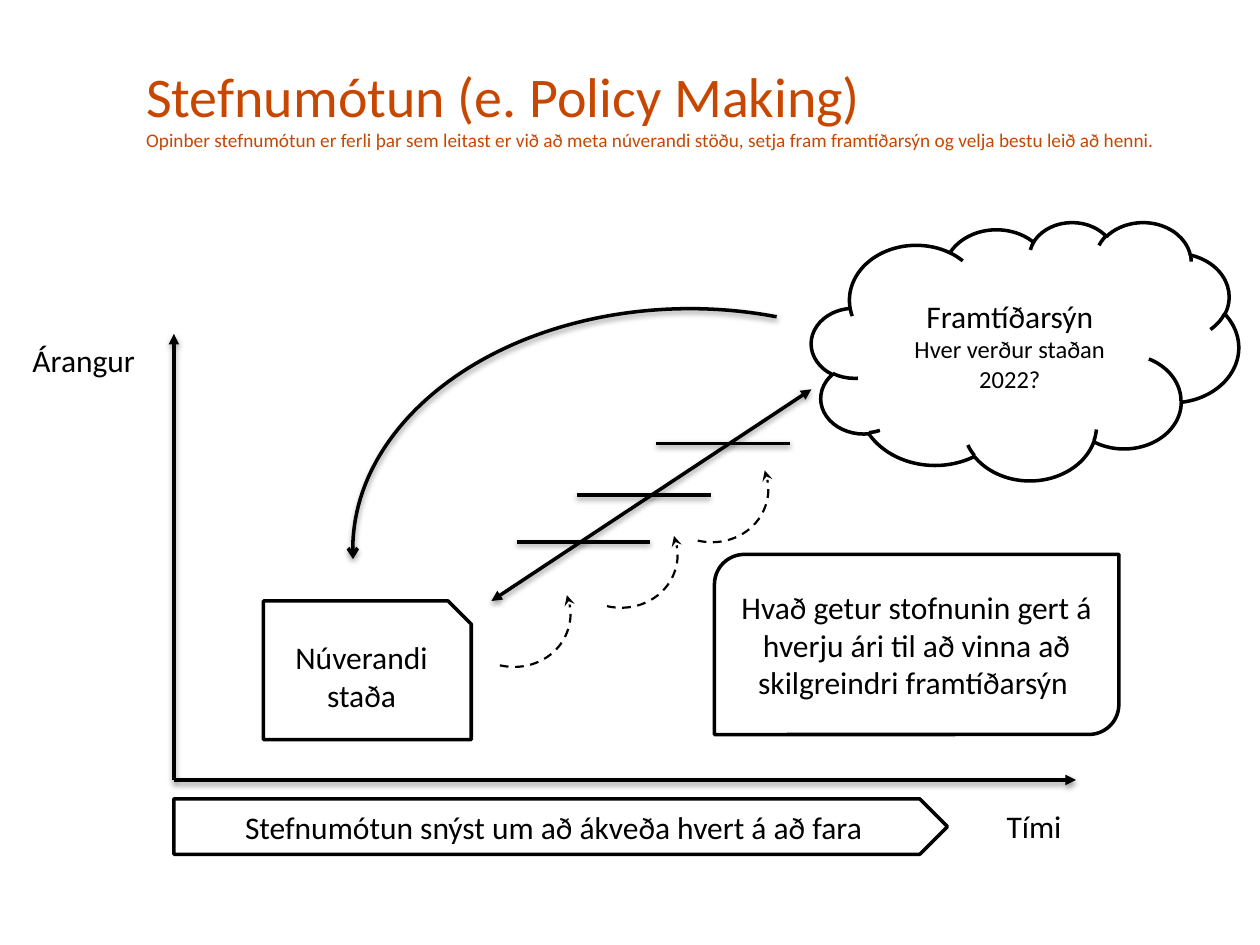
from lxml.etree import SubElement as Sub
from pptx import Presentation
from pptx.dml.color import RGBColor as Rgb
from pptx.enum.dml import MSO_LINE as Dash
from pptx.enum.shapes import MSO_CONNECTOR as Link, MSO_SHAPE as Form
from pptx.enum.text import MSO_ANCHOR as Anchor, PP_ALIGN as Align
from pptx.oxml.ns import qn
from pptx.util import Inches, Pt

HUES = {"ink": "000000", "paper": "FFFFFF", "title": "C84700"}
INK, PAPER, RUST = [Rgb.from_string(HUES[k]) for k in ("ink", "paper", "title")]


def write(frame, parts, hue, align):
    """Fill a text frame with one paragraph; each (text, size) is a line."""
    frame.word_wrap = True
    para = frame.paragraphs[0]
    para.alignment = align
    for i, (text, size) in enumerate(parts):
        if i:
            para.add_line_break()
        run = para.add_run()
        run.text = text
        look = {"name": "Calibri", "size": Pt(size)}
        for key, val in look.items():
            setattr(run.font, key, val)
        run.font.color.rgb = hue


def stroke(shape, width=2, head=None, tail=None, dash=None, shade=False):
    """Draw the outline, its arrowheads and an optional soft shadow."""
    line = shape.line
    line.color.rgb = INK
    line.width = Pt(width)
    if dash:
        line.dash_style = dash
    props = shape._element.spPr
    for tag, kind in (("a:headEnd", head), ("a:tailEnd", tail)):
        if kind:
            Sub(props.find(qn("a:ln")), qn(tag), type=kind)
    fx = Sub(props, qn("a:effectLst"))
    if shade:
        soft = Sub(fx, qn("a:outerShdw"), blurRad="40000", dist="20000",
                   dir="5400000", rotWithShape="0")
        tint = Sub(soft, qn("a:srgbClr"), val=HUES["ink"])
        Sub(tint, qn("a:alpha"), val="38000")


deck = Presentation()
deck.slide_width, deck.slide_height = Inches(10), Inches(7.5)
slide = deck.slides.add_slide(deck.slide_layouts[5])
shapes = slide.shapes

# Title with a small subtitle line
title = shapes.title
spot = {"left": 1.06, "top": 0.13, "width": 8.74, "height": 1.43}
for key, val in spot.items():
    setattr(title, key, Inches(val))
title.text_frame.vertical_anchor = Anchor.MIDDLE
write(title.text_frame, [
    ("Stefnumótun (e. Policy Making)", 32),
    ("Opinber stefnumótun er ferli þar sem leitast er við að meta núverandi "
     "stöðu, setja fram framtíðarsýn og velja bestu leið að henni.", 11),
], RUST, Align.LEFT)

# Axes, the path between the two states, and its steps
lines = [
    ((1.38, 6.19, 1.38, 2.65), {"tail": "triangle"}),
    ((1.38, 6.19, 8.54, 6.19), {"tail": "triangle"}),
    ((3.9, 4.77, 6.44, 3.09), {"head": "triangle", "tail": "triangle"}),
]
for x, y in ((4.1, 4.3), (4.58, 3.93), (5.21, 3.52)):
    lines.append(((x, y, x + 1.06, y), {}))
for ends, look in lines:
    link = shapes.add_connector(Link.STRAIGHT, *map(Inches, ends))
    stroke(link, shade=True, **look)

# Arcs: one long way back, three dashed hops
back = {"tail": "arrow", "shade": True}
hop = {"width": 1.25, "tail": "stealth", "dash": Dash.DASH}
arcs = [((2.8, 2.45, 5.35, 3.83), "flipH", 0, (149.744, 0.93), back)]
for x, y in ((3.59, 4.42), (4.44, 3.95), (5.16, 3.43)):
    arcs.append(((x, y, 0.94, 0.87), "flipV", 16.5, (164.565, 19.9), hop))
for box, flip, turn, sweep, look in arcs:
    arc = shapes.add_shape(Form.ARC, *map(Inches, box))
    arc.adjustments[0], arc.adjustments[1] = sweep
    arc.rotation = turn
    arc._element.spPr.xfrm.set(flip, "1")
    arc.fill.background()
    stroke(arc, **look)

# Outlined shapes with centred text
cards = [
    (Form.CLOUD, (6.44, 1.76, 3.39, 2.05),
     [("Framtíðarsýn", 18), ("Hver verður staðan 2022?", 14)]),
    (Form.SNIP_1_RECTANGLE, (2.09, 4.77, 1.65, 1.1),
     [("Núverandi staða", 18)]),
    (Form.ROUND_2_DIAG_RECTANGLE, (5.67, 4.4, 3.21, 1.43),
     [("Hvað getur stofnunin gert á hverju ári til að vinna að "
       "skilgreindri framtíðarsýn ", 18)]),
    (Form.PENTAGON, (1.38, 6.34, 6.14, 0.44),
     [("Stefnumótun snýst um að ákveða hvert á að fara", 18)]),
]
for form, box, parts in cards:
    card = shapes.add_shape(form, *map(Inches, box))
    card.fill.solid()
    card.fill.fore_color.rgb = PAPER
    stroke(card)
    card.text_frame.vertical_anchor = Anchor.MIDDLE
    write(card.text_frame, parts, INK, Align.CENTER)

# Axis names
for text, box in (("Tími", (7.89, 6.36, 0.87, 0.4)),
                  ("Árangur", (0.16, 2.66, 1.04, 0.4))):
    label = shapes.add_textbox(*map(Inches, box))
    write(label.text_frame, [(text, 18)], INK, Align.LEFT)

deck.save("out.pptx")
